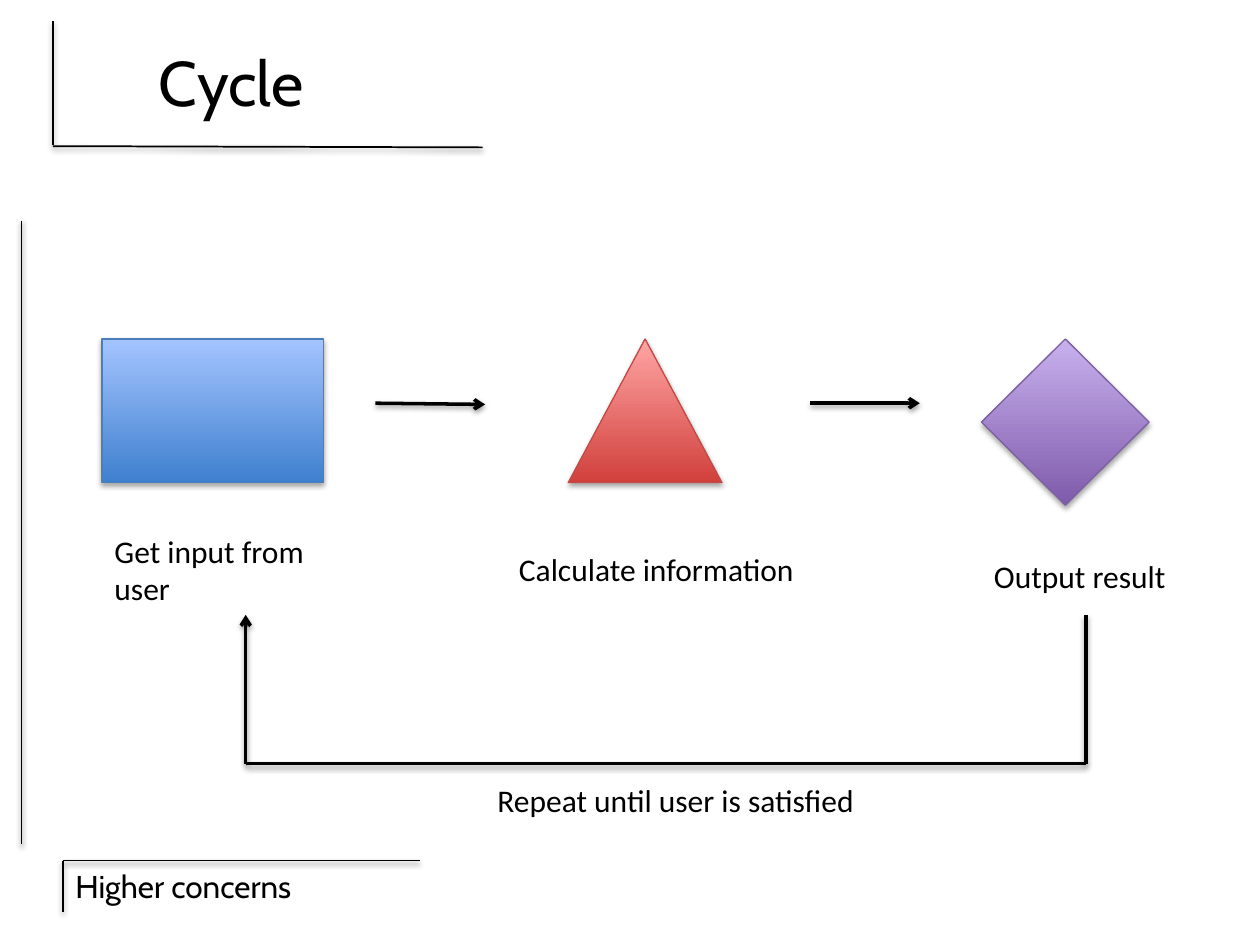
from lxml import etree
from pptx import Presentation
from pptx import util as u
from pptx.dml import color
from pptx.enum import shapes, text
from pptx.oxml import ns

BLACK = color.RGBColor(0x00, 0x00, 0x00)
BLUE_DARK = color.RGBColor(0x3F, 0x80, 0xCE)
BLUE_LIGHT = color.RGBColor(0xA4, 0xC4, 0xFF)
BLUE_EDGE = color.RGBColor(0x4B, 0x7E, 0xBC)
RED_DARK = color.RGBColor(0xD1, 0x40, 0x3C)
RED_LIGHT = color.RGBColor(0xFF, 0xA6, 0xA5)
RED_EDGE = color.RGBColor(0xBF, 0x4C, 0x48)
PURPLE_DARK = color.RGBColor(0x7F, 0x5B, 0xAB)
PURPLE_LIGHT = color.RGBColor(0xC8, 0xB0, 0xED)
PURPLE_EDGE = color.RGBColor(0x7D, 0x60, 0xA0)

deck = Presentation()
deck.slide_width, deck.slide_height = u.Inches(10), u.Inches(7.5)
page = deck.slides.add_slide(deck.slide_layouts[6])


def add_text(words, left, top, width, height, *, size=18, font="Calibri",
             wrap=False, align=text.PP_ALIGN.LEFT, anchor=text.MSO_ANCHOR.TOP,
             fit=text.MSO_AUTO_SIZE.SHAPE_TO_FIT_TEXT):
    box = page.shapes.add_textbox(*map(u.Inches, (left, top, width, height)))
    frame = box.text_frame
    frame.text = words
    frame.word_wrap, frame.auto_size = wrap, fit
    frame.vertical_anchor = anchor
    for para in frame.paragraphs:
        para.alignment = align
        for span in para.runs:
            span.font.name, span.font.size = font, u.Pt(size)
            span.font.color.rgb = BLACK


def add_shadow(item, distance, opacity):
    """Give a shape or connector a soft shadow straight below it."""
    properties = item.element.spPr
    effects = etree.SubElement(properties, ns.qn("a:effectLst"))
    shadow = etree.SubElement(
        effects, ns.qn("a:outerShdw"), blurRad=str(u.Pt(3.1)),
        dist=str(u.Pt(distance)), dir="5400000", rotWithShape="0")
    shade = etree.SubElement(shadow, ns.qn("a:srgbClr"), val=str(BLACK))
    etree.SubElement(shade, ns.qn("a:alpha"), val=str(opacity * 1000))


# Frame lines, then the loop and step arrows: ends, weight, arrowhead
lines = [
    (3.33, 6.83, 0.5, 6.83, 1, False),
    (0.17, 1.75, 0.17, 6.7, 1, False),
    (0.5, 6.83, 0.5, 7.24, 1, False),
    (3.83, 1.17, 0.42, 1.16, 1, False),
    (0.42, 0.17, 0.42, 1.15, 1, False),
    (8.62, 4.88, 8.62, 6.06, 2, False),
    (1.95, 6.06, 8.62, 6.06, 2, False),
    (1.95, 6.06, 1.95, 4.88, 2, True),
    (2.98, 3.2, 3.85, 3.21, 2, True),
    (6.43, 3.2, 7.3, 3.2, 2, True),
]
for *ends, weight, arrow in lines:
    line = page.shapes.add_connector(
        shapes.MSO_CONNECTOR.STRAIGHT, *map(u.Inches, ends))
    line.line.color.rgb, line.line.width = BLACK, u.Pt(weight)
    if arrow:
        outline = line.element.spPr.find(ns.qn("a:ln"))
        etree.SubElement(outline, ns.qn("a:tailEnd"), type="arrow")
    add_shadow(line, 1.6, 38)

# Title and footer
add_text("Cycle", 0.5, 0.17, 2.67, 0.95, size=36, font="Cabin", wrap=True,
         align=text.PP_ALIGN.CENTER, anchor=text.MSO_ANCHOR.MIDDLE,
         fit=text.MSO_AUTO_SIZE.NONE)
add_text("Higher concerns", 0.5, 6.83, 2.42, 0.4, font="Cabin", wrap=True)

# Steps of the cycle: kind, place, gradient from bottom to top, outline
kinds = shapes.MSO_SHAPE
steps = [
    (kinds.RECTANGLE, 0.81, 1.76, 1.14, BLUE_DARK, BLUE_LIGHT, BLUE_EDGE),
    (kinds.ISOSCELES_TRIANGLE, 4.51, 1.22, 1.14,
     RED_DARK, RED_LIGHT, RED_EDGE),
    (kinds.DIAMOND, 7.79, 1.33, 1.32, PURPLE_DARK, PURPLE_LIGHT, PURPLE_EDGE),
]
for kind, left, width, height, dark, light, edge in steps:
    step = page.shapes.add_shape(
        kind, *map(u.Inches, (left, 2.69, width, height)))
    step.fill.gradient()
    step.fill.gradient_angle = 90
    for stop, shade in zip(step.fill.gradient_stops, (dark, light)):
        stop.color.rgb = shade
    step.line.color.rgb, step.line.width = edge, u.Pt(0.75)
    add_shadow(step, 1.8, 35)

# Captions
add_text("Get input from\nuser", 0.81, 4.17, 1.72, 0.71)
add_text("Calculate information", 4.02, 4.32, 2.41, 0.4)
add_text("Output result", 7.79, 4.37, 1.58, 0.4)
add_text("Repeat until user is satisfied", 3.85, 6.15, 3.06, 0.4)

deck.save("out.pptx")
